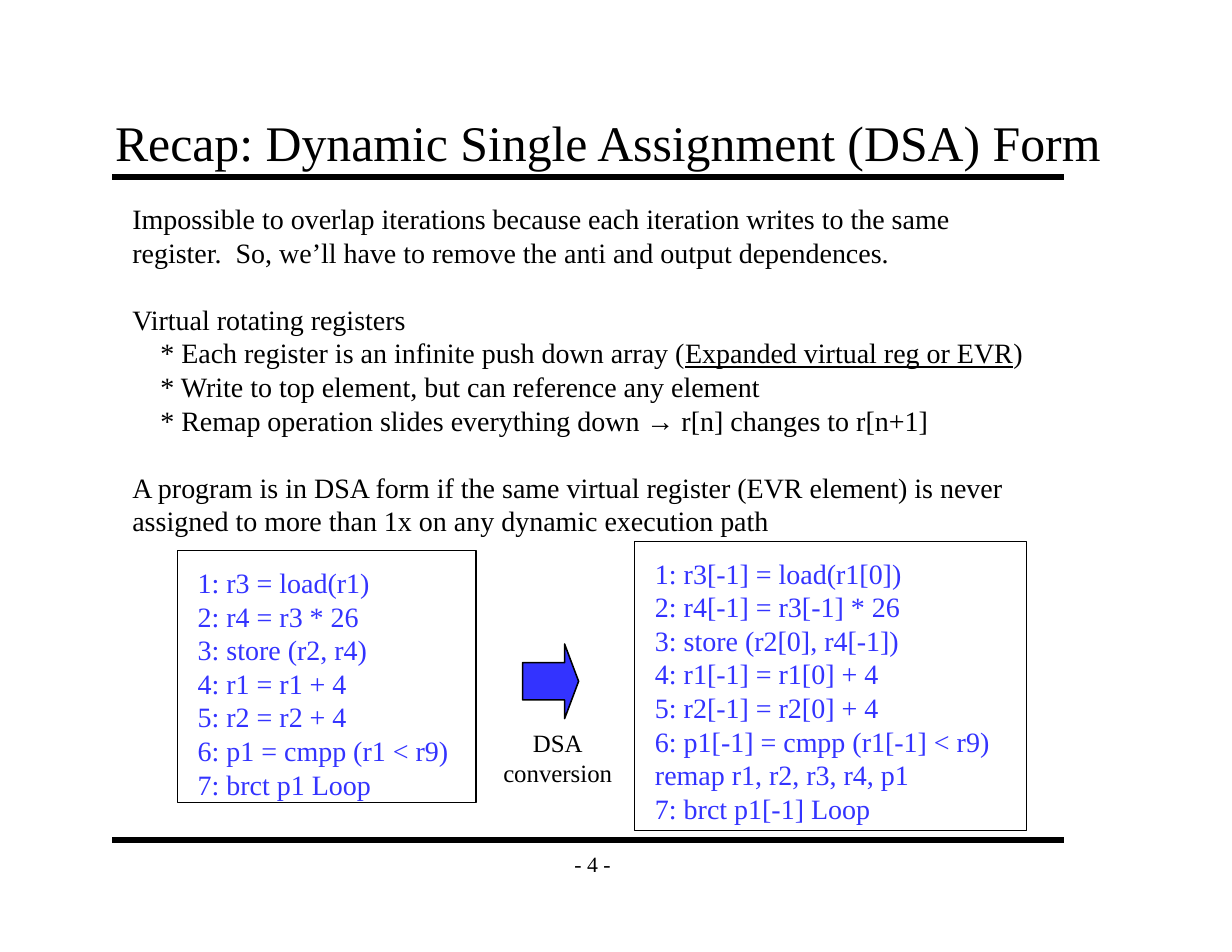
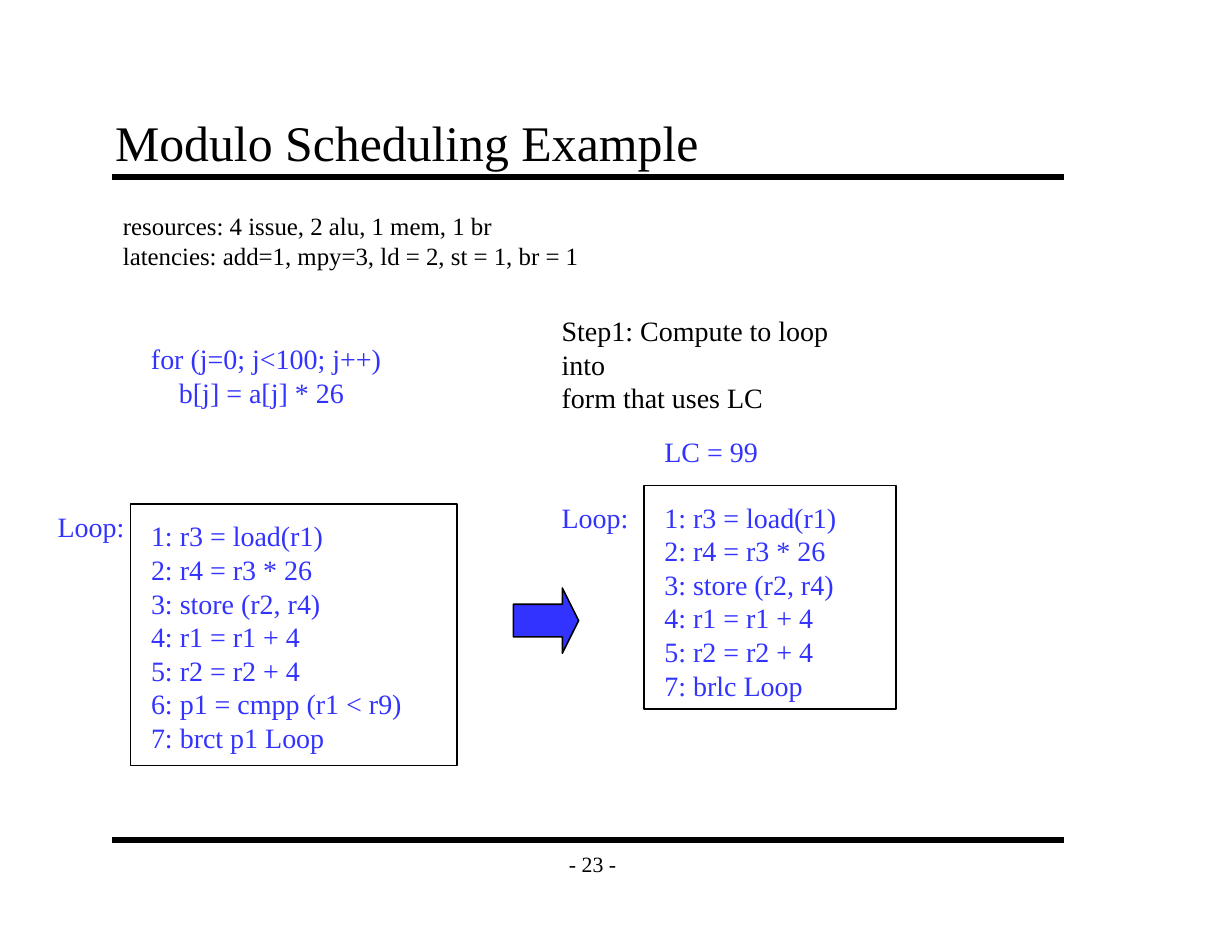
from dataclasses import dataclass

from lxml import etree
from pptx import Presentation
from pptx.dml.color import RGBColor
from pptx.enum.shapes import MSO_CONNECTOR, MSO_SHAPE
from pptx.enum.text import MSO_ANCHOR, MSO_AUTO_SIZE, PP_ALIGN
from pptx.oxml.ns import qn
from pptx.util import Pt

RECTANGLE = MSO_SHAPE.RECTANGLE
RIGHT_ARROW = MSO_SHAPE.RIGHT_ARROW
STRAIGHT = MSO_CONNECTOR.STRAIGHT
TOP, MIDDLE, BOTTOM = MSO_ANCHOR.TOP, MSO_ANCHOR.MIDDLE, MSO_ANCHOR.BOTTOM
LEFT, CENTER = PP_ALIGN.LEFT, PP_ALIGN.CENTER
FIT_TEXT = MSO_AUTO_SIZE.SHAPE_TO_FIT_TEXT

FONT = "Times New Roman"
BLACK, BLUE = "000000", "3333FF"
LINE_HEIGHT = 1.2
CODE_PADDING = 6
INDENT = 18

LOOP_BODY = [
    "1: r3 = load(r1)",
    "2: r4 = r3 * 26",
    "3: store (r2, r4)",
    "4: r1 = r1 + 4",
    "5: r2 = r2 + 4",
]
WHILE_LOOP = LOOP_BODY + ["6: p1 = cmpp (r1 < r9)", "7: brct p1 Loop"]
COUNTED_LOOP = LOOP_BODY + ["7: brlc Loop"]
DSA_LOOP = [
    "1: r3[-1] = load(r1[0])",
    "2: r4[-1] = r3[-1] * 26",
    "3: store (r2[0], r4[-1])",
    "4: r1[-1] = r1[0] + 4",
    "5: r2[-1] = r2[0] + 4",
    "6: p1[-1] = cmpp (r1[-1] < r9)",
    "remap r1, r2, r3, r4, p1",
    "7: brct p1[-1] Loop",
]


def color(hex_string):
    return RGBColor.from_string(hex_string)


@dataclass
class Line:
    text: str
    indented: bool = False
    gap_before: bool = False
    underlined: str = ""


class Deck:
    """Holds the shared style and the slide being filled."""

    def __init__(self):
        self.presentation = Presentation()
        self.presentation.slide_width = Pt(792)
        self.presentation.slide_height = Pt(612)
        self.slide = None

    def new_slide(self, title, number, title_width=612):
        layout = self.presentation.slide_layouts[6]
        self.slide = self.presentation.slides.add_slide(layout)
        for y in (114, 540):
            self.rule(72, 684, y)
        self.band_text(f"- {number} -", 354, 540, 54, 30, 14, MIDDLE, CENTER)
        self.band_text(title, 66, 66, title_width, 48, 32, BOTTOM, LEFT)

    def rule(self, start, end, y):
        connector = self.slide.shapes.add_connector(
            STRAIGHT, Pt(start), Pt(y), Pt(end), Pt(y))
        connector.line.color.rgb = color(BLACK)
        connector.line.width = Pt(4)
        etree.SubElement(connector._element.spPr, qn("a:effectLst"))

    def band_text(self, text, x, y, width, height, size, anchor, align):
        """Title and page number."""
        box = self.slide.shapes.add_textbox(Pt(x), Pt(y), Pt(width), Pt(height))
        frame = box.text_frame
        frame.margin_left = frame.margin_right = Pt(8)
        frame.margin_top = frame.margin_bottom = Pt(4)
        frame.word_wrap = align == LEFT
        frame.vertical_anchor = anchor
        paragraph = frame.paragraphs[0]
        paragraph.text = text
        self.style(paragraph, size, BLACK, align)

    def style(self, paragraph, size, text_color, align):
        paragraph.alignment = align
        paragraph.font.name = FONT
        paragraph.font.size = Pt(size)
        paragraph.font.color.rgb = color(text_color)

    def text(self, lines, x, y, width, size=18, text_color=BLACK, align=LEFT):
        lines = [Line(line) if isinstance(line, str) else line for line in lines]
        pitch = size * LINE_HEIGHT
        rows = len(lines) + sum(line.gap_before for line in lines)
        box = self.slide.shapes.add_textbox(
            Pt(x), Pt(y), Pt(width), Pt(rows * pitch + 7.2))
        frame = box.text_frame
        frame.word_wrap = False
        frame.auto_size = FIT_TEXT
        frame.vertical_anchor = TOP
        for index, line in enumerate(lines):
            paragraph = frame.add_paragraph() if index else frame.paragraphs[0]
            self.style(paragraph, size, text_color, align)
            paragraph.line_spacing = Pt(pitch)
            if line.gap_before:
                paragraph.space_before = Pt(pitch)
            if line.indented:
                paragraph._p.get_or_add_pPr().set("marL", str(Pt(INDENT)))
            if line.underlined:
                for part in line.text.partition(line.underlined):
                    run = paragraph.add_run()
                    run.text = part
                    run.font.underline = part == line.underlined
            else:
                paragraph.text = line.text

    def code(self, lines, x, y, width):
        self.text(lines, x, y, width, text_color=BLUE)

    def code_box(self, lines, x, y, width, height, text_width):
        self.code(lines, x + CODE_PADDING, y + CODE_PADDING, text_width)
        self.shape(RECTANGLE, x, y, width, height)

    def arrow(self, x, y, width, height):
        arrow = self.shape(RIGHT_ARROW, x, y, width, height, BLUE)
        arrow.adjustments[0] = 0.5
        arrow.adjustments[1] = 0.25

    def shape(self, kind, x, y, width, height, fill=None):
        shape = self.slide.shapes.add_shape(
            kind, Pt(x), Pt(y), Pt(width), Pt(height))
        shape.shadow.inherit = False
        if fill:
            shape.fill.solid()
            shape.fill.fore_color.rgb = color(fill)
        else:
            shape.fill.background()
        shape.line.color.rgb = color(BLACK)
        shape.line.width = Pt(1)
        return shape


def dsa_slide(deck):
    deck.new_slide("Recap: Dynamic Single Assignment (DSA) Form", 4, 654)

    # Explanation
    deck.text([
        "Impossible to overlap iterations because each iteration writes to the same",
        "register.  So, we’ll have to remove the anti and output dependences.",
        Line("Virtual rotating registers", gap_before=True),
        Line("* Each register is an infinite push down array (Expanded virtual reg or EVR)",
             indented=True, underlined="Expanded virtual reg or EVR"),
        Line("* Write to top element, but can reference any element", indented=True),
        Line("* Remap operation slides everything down → r[n] changes to r[n+1]",
             indented=True),
        Line("A program is in DSA form if the same virtual register (EVR element) is never",
             gap_before=True),
        "assigned to more than 1x on any dynamic execution path",
    ], 78, 126, 587)

    # Conversion of the loop
    deck.code_box(WHILE_LOOP, 114, 354, 192, 162, 176)
    deck.code_box(DSA_LOOP, 408, 348, 252, 186, 230)
    deck.arrow(336, 414, 36, 48)
    deck.text(["DSA", "conversion"], 316, 464, 85, size=16, align=CENTER)


def modulo_slide(deck):
    deck.new_slide("Modulo Scheduling Example", 23)

    # Machine and source loop
    deck.text([
        "resources: 4 issue, 2 alu, 1 mem, 1 br",
        "latencies: add=1, mpy=3, ld = 2, st = 1, br = 1",
    ], 72, 132, 308, size=16)
    deck.code(["for (j=0; j<100; j++)", Line("b[j] = a[j] * 26", indented=True)],
              90, 216, 163)

    # Loop before and after using LC
    deck.code_box(WHILE_LOOP, 84, 324, 210, 168, 176)
    deck.arrow(330, 378, 42, 42)
    deck.code_box(COUNTED_LOOP, 414, 312, 162, 144, 125)
    for x, y in ((30, 324), (354, 318)):
        deck.code(["Loop:"], x, y, 58)
    deck.code(["LC = 99"], 420, 276, 75)
    deck.text(["Step1: Compute to loop into", "form that uses LC"], 354, 198, 218)


def main():
    deck = Deck()
    dsa_slide(deck)
    modulo_slide(deck)
    deck.presentation.save("out.pptx")


if __name__ == "__main__":
    main()
